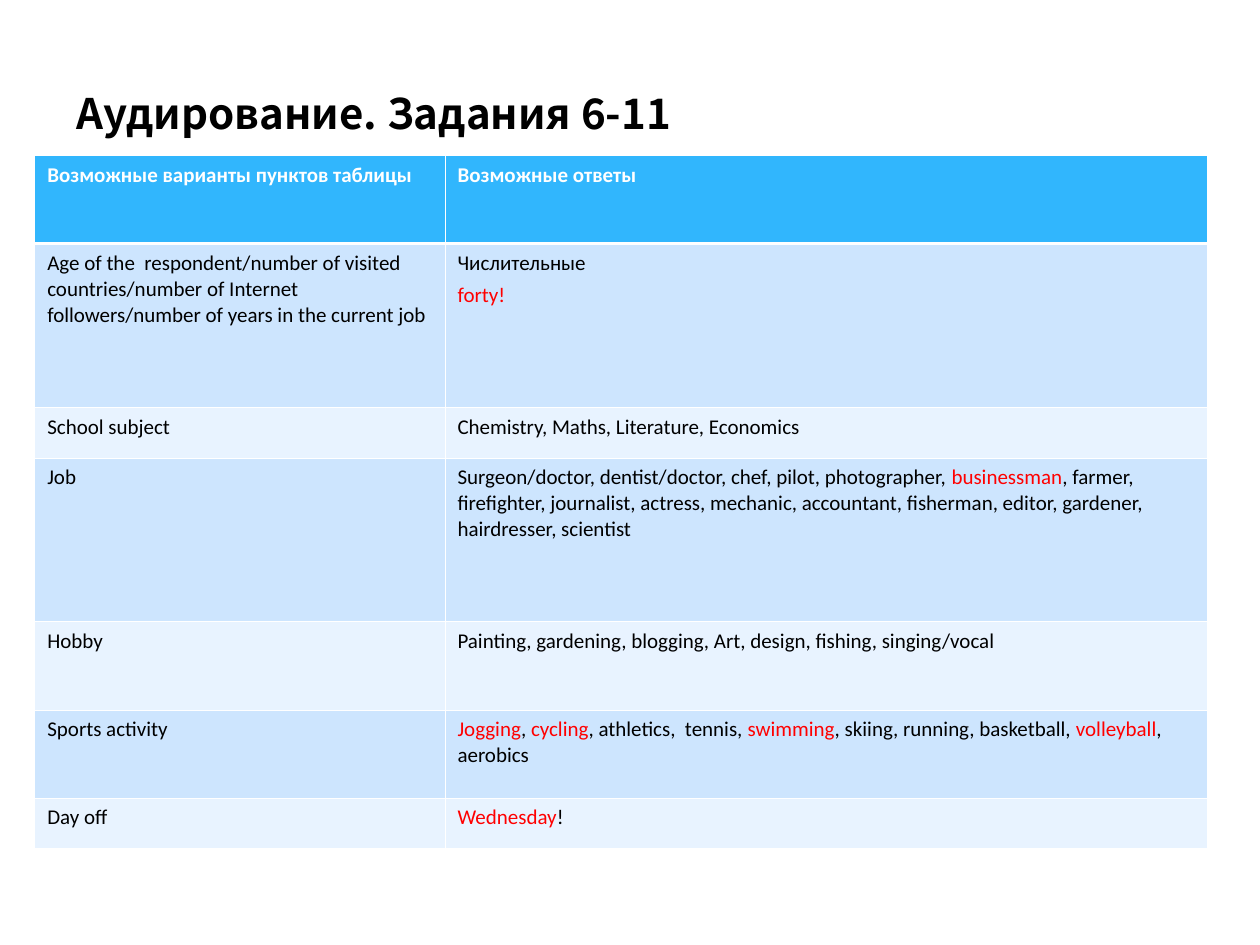
import lxml.etree
import pptx
import pptx.dml.color
import pptx.enum.text
import pptx.oxml.ns
import pptx.util

Cm, Pt = pptx.util.Cm, pptx.util.Pt

WHITE, BLACK, RED = "FFFFFF", "000000", "FF0000"
HEADER_FILL = "31B6FD"
BAND_FILLS = ["E8F3FF", "CDE5FE"]
THIN, THICK = 0.45, 1.48

COLUMN_WIDTHS = [8.27, 15.36]
ROW_HEIGHTS = [1.78, 3.3, 1.02, 3.3, 1.78, 1.78, 1.02]

# Words between asterisks are red; a line break starts a new paragraph.
ROWS = [
    ["Возможные варианты пунктов таблицы", "Возможные ответы"],
    ["Age of the  respondent/number of visited countries/number of Internet "
     "followers/number of years in the current job",
     "Числительные\n*forty!*"],
    ["School subject", "Chemistry, Maths, Literature, Economics"],
    ["Job",
     "Surgeon/doctor, dentist/doctor, chef, pilot, photographer, *businessman*, "
     "farmer, firefighter, journalist, actress, mechanic, accountant, fisherman, "
     "editor, gardener, hairdresser, scientist"],
    ["Hobby", "Painting, gardening, blogging, Art, design, fishing, singing/vocal"],
    ["Sports activity",
     "*Jogging*, *cycling*, athletics,  tennis, *swimming*, skiing, running, "
     "basketball, *volleyball*, aerobics"],
    ["Day off", "*Wednesday*!"],
]


def color(value):
    return pptx.dml.color.RGBColor.from_string(value)


def set_font(font, name, size, bold, ink):
    font.name, font.size, font.bold = name, Pt(size), bold
    font.color.rgb = color(ink)


def add_title(page, text):
    box = page.shapes.add_textbox(Cm(1.3), Cm(0.53), Cm(22.89), Cm(3.48))
    frame = box.text_frame
    frame.word_wrap = True
    frame.vertical_anchor = pptx.enum.text.MSO_ANCHOR.MIDDLE
    para = frame.paragraphs[0]
    para.text = text
    set_font(para.font, "Noto Sans CJK KR", 24, True, BLACK)


def set_borders(cell, top, bottom):
    """Draw white lines round a cell; the side lines are thin."""
    properties = cell._tc.get_or_add_tcPr()
    qn = pptx.oxml.ns.qn
    widths = {"a:lnL": THIN, "a:lnR": THIN, "a:lnT": top, "a:lnB": bottom}
    for tag, width in widths.items():
        line = lxml.etree.SubElement(properties, qn(tag), w=str(int(Pt(width))))
        fill = lxml.etree.SubElement(line, qn("a:solidFill"))
        lxml.etree.SubElement(fill, qn("a:srgbClr"), val=WHITE)


def write_cell(cell, text, ink, bold):
    frame = cell.text_frame
    for index, line in enumerate(text.split("\n")):
        para = frame.add_paragraph() if index else frame.paragraphs[0]
        para.line_spacing = 1.02
        if index:
            para.space_before = Pt(3.6)
        set_font(para.font, "Calibri", 12, bold, ink)
        for part, words in enumerate(line.split("*")):
            if words:
                span = para.add_run()
                span.text = words
                if part % 2:
                    span.font.color.rgb = color(RED)


def add_answer_table(page):
    frame = page.shapes.add_table(
        len(ROWS), len(COLUMN_WIDTHS), Cm(0.7), Cm(3.13),
        Cm(sum(COLUMN_WIDTHS)), Cm(sum(ROW_HEIGHTS)))
    table = frame.table
    for column, width in zip(table.columns, COLUMN_WIDTHS):
        column.width = Cm(width)
    for index, (row, height, texts) in enumerate(zip(table.rows, ROW_HEIGHTS, ROWS)):
        row.height = Cm(height)
        header = index == 0
        for cell, text in zip(row.cells, texts):
            # The line under the header is thicker than the others
            set_borders(cell, THICK if index == 1 else THIN, THICK if header else THIN)
            cell.fill.solid()
            cell.fill.fore_color.rgb = color(HEADER_FILL if header else BAND_FILLS[index % 2])
            write_cell(cell, text, WHITE if header else BLACK, header)


def main():
    deck = pptx.Presentation()
    deck.slide_width, deck.slide_height = Cm(25.4), Cm(19.05)
    page = deck.slides.add_slide(deck.slide_layouts[6])
    add_title(page, "Аудирование. Задания 6-11")
    add_answer_table(page)
    deck.save("out.pptx")


if __name__ == "__main__":
    main()
